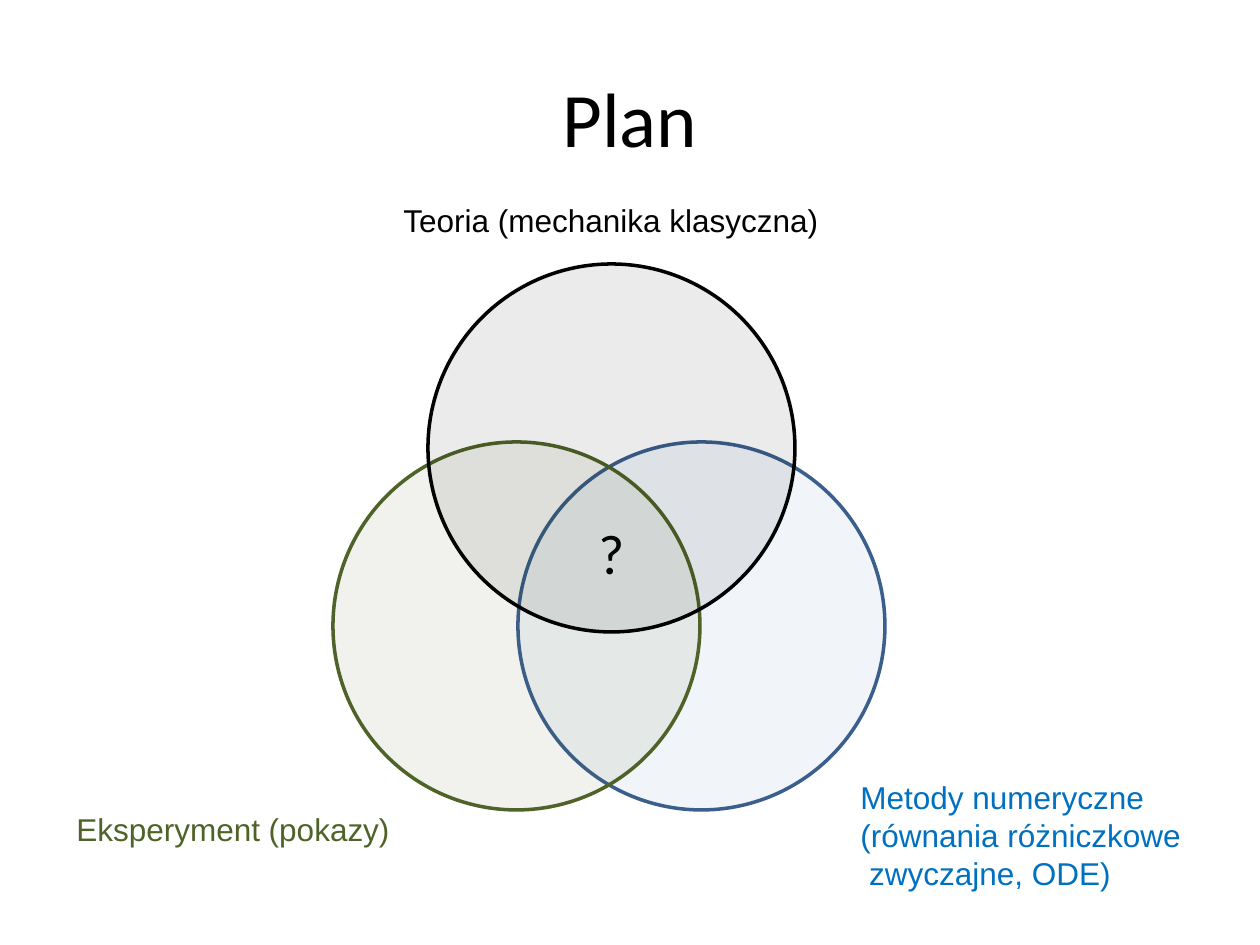
from lxml import etree
from pptx import Presentation
from pptx import util as u
from pptx.dml.color import RGBColor
from pptx.enum import shapes, text
from pptx.oxml.ns import qn

C = {"black": "000000", "blue": "4F81BD", "blue_line": "3A5F8C",
     "green": "4F6228", "blue_text": "0070C0"}


def px(*values):
    return [u.Emu(round(v * 914400 / 126)) for v in values]


def add_text(s, box, lines, fmt, color, align=text.PP_ALIGN.LEFT, wrap=False):
    tf = s.shapes.add_textbox(*px(*box)).text_frame
    tf.word_wrap = wrap
    tf.vertical_anchor = text.MSO_ANCHOR.MIDDLE if wrap else text.MSO_ANCHOR.TOP
    tf.auto_size = (text.MSO_AUTO_SIZE.NONE if wrap
                    else text.MSO_AUTO_SIZE.SHAPE_TO_FIT_TEXT)
    for i, line in enumerate(lines):
        p = tf.paragraphs[0] if i == 0 else tf.add_paragraph()
        p.alignment = align
        r = p.add_run()
        r.text = line
        for key, value in fmt.items():
            setattr(r.font, key, value)
        r.font.color.rgb = RGBColor.from_string(C[color])


prs = Presentation()
prs.slide_width, prs.slide_height = px(1260, 945)
s = prs.slides.add_slide(prs.slide_layouts[6])

# Text formats
title = {"name": "Calibri", "size": u.Pt(44)}
label = {"name": "Arial", "size": u.Pt(18)}
mark = {"name": "Calibri", "size": u.Pt(32)}

# Title
add_text(s, (63, 38, 1134, 158), ["Plan"], title, "black",
         text.PP_ALIGN.CENTER, True)

# Venn circles, 8 % opaque
for left, top, fill, line in [(518, 442, "blue", "blue_line"),
                              (333, 442, "green", "green"),
                              (428, 264, "black", "black")]:
    sp = s.shapes.add_shape(shapes.MSO_SHAPE.OVAL, *px(left, top, 367, 368))
    sp.shadow.inherit = False
    sp.fill.solid()
    sp.fill.fore_color.rgb = RGBColor.from_string(C[fill])
    clr = sp.fill._xPr.find(qn("a:solidFill"))[0]
    etree.SubElement(clr, qn("a:alpha")).set("val", "8000")
    sp.line.color.rgb = RGBColor.from_string(C[line])
    sp.line.width = u.Pt(2)

# Circle labels and the shared centre
for box, lines, fmt, color in [
    ((391, 195, 445, 50), ["Teoria (mechanika klasyczna)"], label, "black"),
    ((64, 804, 341, 50), ["Eksperyment (pokazy)"], label, "green"),
    ((848, 772, 358, 127),
     ["Metody numeryczne", "(równania różniczkowe", " zwyczajne, ODE)"],
     label, "blue_text"),
    ((586, 512, 52, 81), ["?"], mark, "black"),
]:
    add_text(s, box, lines, fmt, color)

prs.save("out.pptx")
